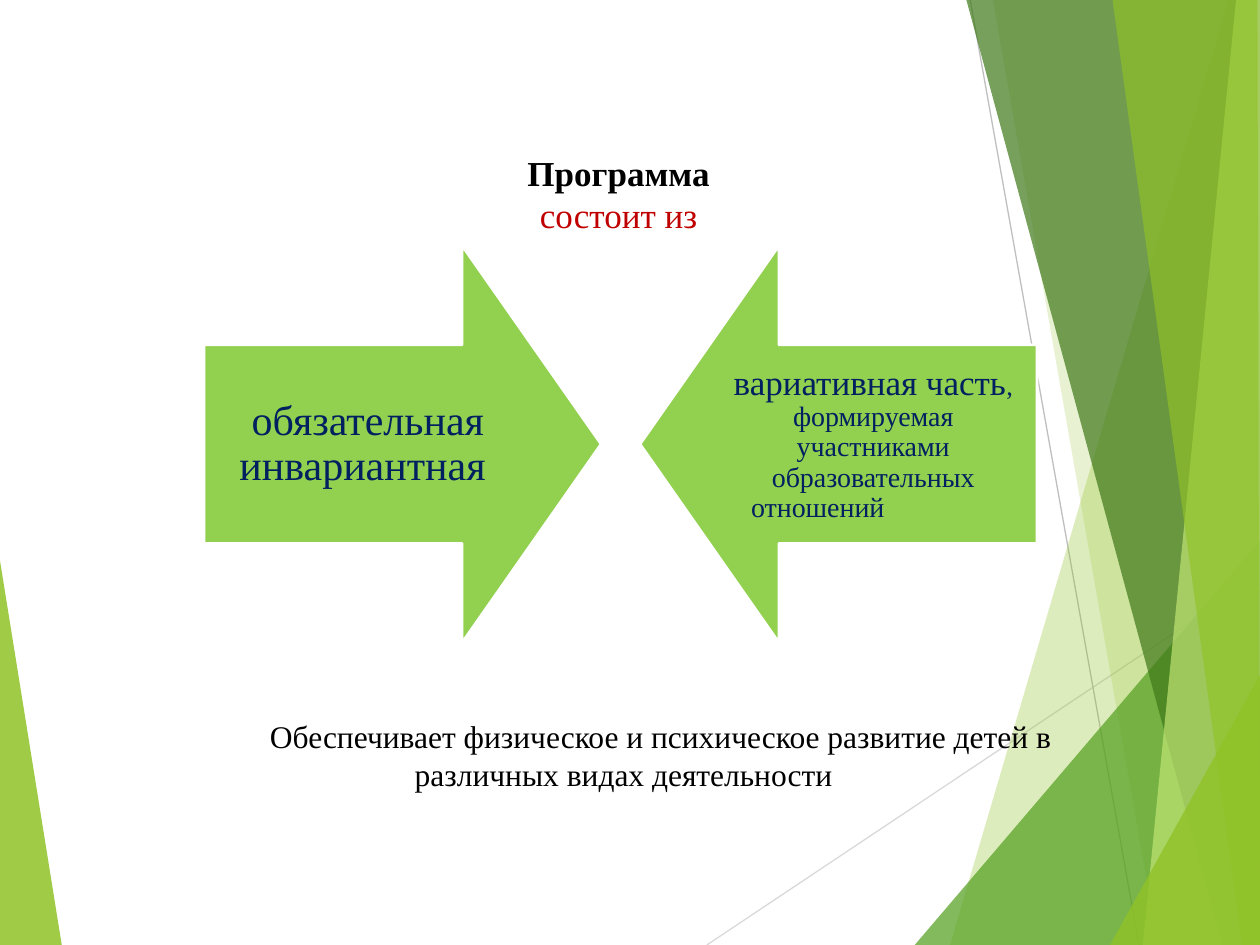
from lxml import etree
from pptx import Presentation
from pptx.dml.color import RGBColor
from pptx.enum.shapes import MSO_CONNECTOR, MSO_SHAPE
from pptx.enum.text import MSO_ANCHOR, MSO_AUTO_SIZE, PP_ALIGN
from pptx.oxml.ns import qn
from pptx.util import Inches, Pt

STRAIGHT = MSO_CONNECTOR.STRAIGHT
RIGHT_ARROW, LEFT_ARROW = MSO_SHAPE.RIGHT_ARROW, MSO_SHAPE.LEFT_ARROW
TOP, MIDDLE = MSO_ANCHOR.TOP, MSO_ANCHOR.MIDDLE
NO_FIT = MSO_AUTO_SIZE.NONE
CENTER, LEFT = PP_ALIGN.CENTER, PP_ALIGN.LEFT

FONT = "Times New Roman"
BLACK = RGBColor(0x00, 0x00, 0x00)
WHITE = RGBColor(0xFF, 0xFF, 0xFF)
RED = RGBColor(0xC0, 0x00, 0x00)
NAVY = RGBColor(0x00, 0x20, 0x60)
ARROW_GREEN = RGBColor(0x92, 0xD0, 0x50)
LIME = RGBColor(0x90, 0xC2, 0x26)
PALE_LIME = RGBColor(0xC0, 0xE4, 0x74)
GREEN = RGBColor(0x54, 0xA0, 0x21)
DARK_GREEN = RGBColor(0x3F, 0x78, 0x19)
LIGHT_GREY = RGBColor(0xD9, 0xD9, 0xD9)
GREY = RGBColor(0xBF, 0xBF, 0xBF)

W, H = 10, 7.5
ARROW_SIZE = 3.15
ARROW_TOP = 1.95

# Decoration: outline points, colour, opacity in percent
LEFT_FACET = ([(0, 4.45), (0.49, H), (0, H)], LIME, 85)
RIGHT_FACETS = [
    ([(9.75, 0), (7.54, H), (W, H), (W, 0)], LIME, 30),
    ([(7.88, 0), (9.19, H), (W, H), (W, 0)], LIME, 20),
    ([(7.26, H), (W, 4.29), (W, H)], GREEN, 72),
    ([(7.67, 0), (9.7, H), (W, H), (W, 0)], DARK_GREEN, 70),
    ([(9.81, 0), (9.07, H), (W, H), (W, 0)], PALE_LIME, 70),
    ([(8.83, 0), (9.86, H), (W, H), (9.98, 0)], LIME, 65),
    ([(8.81, H), (W, 5.36), (W, H)], LIME, 80),
]
RAYS = [((5.61, H), (W, 4.57), LIGHT_GREY), ((7.7, 0), (9.04, H), GREY)]


def add_facet(slide, points, color, opacity):
    start, *rest = [(Inches(x), Inches(y)) for x, y in points]
    builder = slide.shapes.build_freeform(*start)
    builder.add_line_segments(rest, close=True)
    facet = builder.convert_to_shape()
    facet.shadow.inherit = False
    facet.line.fill.background()
    facet.fill.solid()
    facet.fill.fore_color.rgb = color
    rgb = facet.fill._xPr.find(".//" + qn("a:srgbClr"))
    etree.SubElement(rgb, qn("a:alpha"), val=str(opacity * 1000))


def add_ray(slide, start, end, color):
    ray = slide.shapes.add_connector(STRAIGHT, *map(Inches, start + end))
    ray.line.color.rgb = color
    ray.line.width = Pt(0.75)
    etree.SubElement(ray._element.spPr, qn("a:effectLst"))


def write_paragraphs(frame, paragraphs, spacing=1.0):
    """Each paragraph is a list of (text, size, color, bold) runs."""
    for index, runs in enumerate(paragraphs):
        paragraph = frame.add_paragraph() if index else frame.paragraphs[0]
        paragraph.alignment = CENTER
        paragraph.line_spacing = spacing
        paragraph.space_before = paragraph.space_after = Pt(0)
        for text, size, color, bold in runs:
            run = paragraph.add_run()
            run.text = text
            run.font.name = FONT
            run.font.size = Pt(size)
            run.font.bold = bold
            run.font.color.rgb = color


def add_arrow(slide, kind, left, inset, paragraphs):
    arrow = slide.shapes.add_shape(
        kind, Inches(left), Inches(ARROW_TOP), Inches(ARROW_SIZE), Inches(ARROW_SIZE))
    arrow.adjustments[0], arrow.adjustments[1] = 0.5, 0.35
    arrow.shadow.inherit = False
    arrow.fill.solid()
    arrow.fill.fore_color.rgb = ARROW_GREEN
    arrow.line.color.rgb = WHITE
    arrow.line.width = Pt(1.5)
    frame = arrow.text_frame
    frame.word_wrap = True
    frame.vertical_anchor = MIDDLE
    frame.margin_left = frame.margin_right = Inches(inset)
    frame.margin_top = frame.margin_bottom = Inches(inset)
    write_paragraphs(frame, paragraphs, 0.9)
    return arrow


def add_title(slide):
    title = slide.shapes.title
    title.left, title.top, title.width, title.height = map(Inches, (4.08, 1.15, 1.73, 0.77))
    frame = title.text_frame
    frame.auto_size = NO_FIT
    frame.word_wrap = False
    frame.vertical_anchor = TOP
    write_paragraphs(frame, [[("Программа ", 20, BLACK, True)],
                             [("состоит из ", 20, RED, False)]])


def add_summary(slide):
    box = slide.shapes.add_textbox(*map(Inches, (1.17, 5.64, 7.56, 0.71)))
    frame = box.text_frame
    frame.word_wrap = True
    write_paragraphs(frame, [[("Обеспечивает физическое и психическое развитие детей "
                               "в различных видах деятельности", 18, BLACK, False)]])
    frame.paragraphs[0]._p.get_or_add_pPr().set("indent", str(Inches(0.59)))


def main():
    prs = Presentation()
    prs.slide_width, prs.slide_height = Inches(W), Inches(H)
    slide = prs.slides.add_slide(prs.slide_layouts[5])

    # Background decoration
    add_facet(slide, *LEFT_FACET)
    for ray in RAYS:
        add_ray(slide, *ray)
    for facet in RIGHT_FACETS:
        add_facet(slide, *facet)

    # Title, the two parts of the programme, and the summary
    add_title(slide)
    add_arrow(slide, RIGHT_ARROW, 1.62, 0.19,
              [[("обязательная инвариантная ", 24, NAVY, False)]])
    variable_part = add_arrow(slide, LEFT_ARROW, 5.08, 0.16, [
        [("вариативная часть", 20, NAVY, False), (", ", 15, NAVY, False),
         ("формируемая участниками образовательных", 16, NAVY, False)],
        [("отношений", 16, NAVY, False)],
    ])
    last_line = variable_part.text_frame.paragraphs[-1]
    last_line.alignment = LEFT
    last_line._p.get_or_add_pPr().set("marL", str(Inches(0.17)))
    add_summary(slide)

    prs.save("out.pptx")


if __name__ == "__main__":
    main()
